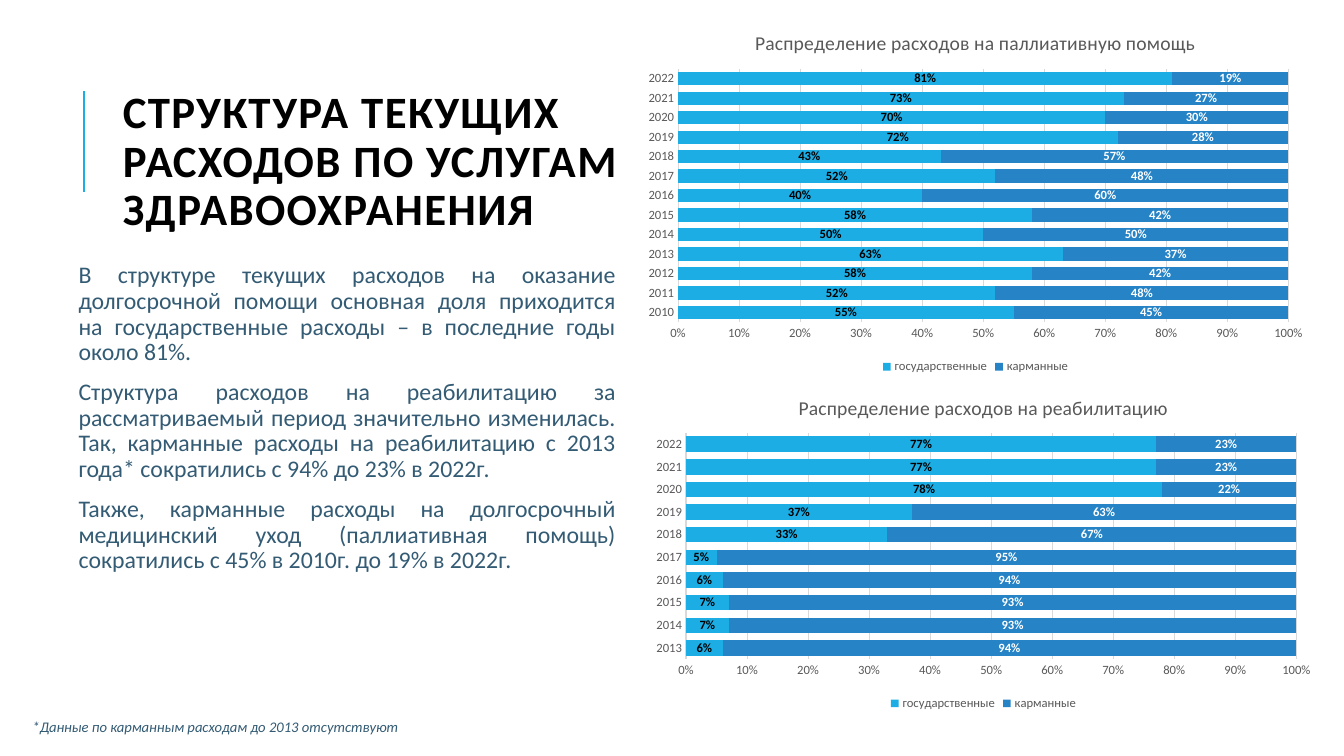
from dataclasses import dataclass

from lxml import etree
from pptx import Presentation
from pptx.chart.data import CategoryChartData
from pptx.dml.color import RGBColor
from pptx.enum.chart import XL_CHART_TYPE as ChartType
from pptx.enum.chart import XL_LABEL_POSITION as LabelPosition
from pptx.enum.chart import XL_LEGEND_POSITION as LegendPosition
from pptx.enum.chart import XL_TICK_MARK as TickMark
from pptx.enum.shapes import MSO_CONNECTOR as Connector
from pptx.enum.text import MSO_ANCHOR as Anchor
from pptx.enum.text import MSO_AUTO_SIZE as AutoSize
from pptx.enum.text import PP_ALIGN as Align
from pptx.oxml.ns import qn
from pptx.util import Cm, Pt


@dataclass(frozen=True)
class Theme:
    font: str = "Calibri"
    black: str = "000000"
    white: str = "FFFFFF"
    state: str = "1CADE4"
    pocket: str = "2683C6"
    body: str = "335B74"
    muted: str = "595959"
    grid: str = "D9D9D9"
    heading_size: float = 32
    body_size: float = 17
    note_size: float = 10.5
    chart_title_size: float = 14
    chart_size: float = 9


THEME = Theme()


def style_font(font, size, color, bold=False, italic=False):
    font.name = THEME.font
    font.size = Pt(size)
    font.color.rgb = RGBColor.from_string(color)
    font.bold = bold
    font.italic = italic


def add_justified_text(slide, box, paragraphs, size, italic=False):
    frame = slide.shapes.add_textbox(*map(Cm, box)).text_frame
    frame.word_wrap = True
    frame.margin_left = frame.margin_right = Cm(0.13)
    frame.margin_top = frame.margin_bottom = Cm(0.13)
    for index, text in enumerate(paragraphs):
        paragraph = frame.add_paragraph() if index else frame.paragraphs[0]
        paragraph.alignment = Align.JUSTIFY
        paragraph.line_spacing = 0.9
        paragraph.space_after = Pt(10)
        run = paragraph.add_run()
        run.text = text
        style_font(run.font, size, THEME.body, italic=italic)


deck = Presentation()
deck.slide_width, deck.slide_height = Cm(33.87), Cm(19.05)
slide = deck.slides.add_slide(deck.slide_layouts[5])

# Heading with its accent line
accent = slide.shapes.add_connector(Connector.STRAIGHT, Cm(2.12), Cm(4.83), Cm(2.12), Cm(2.29))
accent.line.color.rgb = RGBColor.from_string(THEME.state)
accent.line.width = Pt(1.5)
etree.SubElement(accent._element.spPr, qn("a:effectLst"))

heading = slide.shapes.title
heading.left, heading.top, heading.width, heading.height = map(Cm, (2.84, 1.63, 14.1, 4.93))
heading_frame = heading.text_frame
heading_frame.auto_size = AutoSize.NONE
heading_frame.word_wrap = True
heading_frame.vertical_anchor = Anchor.MIDDLE
heading_line = heading_frame.paragraphs[0]
heading_line.alignment = Align.LEFT
heading_line.line_spacing = 0.9
heading_run = heading_line.add_run()
heading_run.text = "СТРУКТУРА ТЕКУЩИХ РАСХОДОВ ПО УСЛУГАМ ЗДРАВООХРАНЕНИЯ"
style_font(heading_run.font, THEME.heading_size, THEME.black, bold=True)
heading_run._r.get_or_add_rPr().set("spc", "100")

# Findings and footnote
findings = [
    "В структуре текущих расходов на оказание долгосрочной помощи основная доля "
    "приходится на государственные расходы – в последние годы около 81%.",
    "Структура расходов на реабилитацию за рассматриваемый период значительно изменилась. "
    "Так, карманные расходы на реабилитацию с 2013 года* сократились с 94% до 23% в 2022г.",
    "Также, карманные расходы на долгосрочный медицинский уход (паллиативная помощь) "
    "сократились с 45% в 2010г. до 19% в 2022г.",
]
add_justified_text(slide, (1.85, 6.5, 13.8, 9.2), findings, THEME.body_size)
footnote = ["*Данные по карманным расходам до 2013 отсутствуют"]
add_justified_text(slide, (0.69, 18, 12.3, 0.76), footnote, THEME.note_size, italic=True)

# Charts: title, box, first year, state share in percent (the rest is out of pocket)
spending_charts = [
    ("Распределение расходов на паллиативную помощь", (16, 0.33, 17.17, 9.2), 2010,
     [55, 52, 58, 63, 50, 58, 40, 52, 43, 72, 70, 73, 81]),
    ("Распределение расходов на реабилитацию", (16.2, 9.53, 17.17, 8.48), 2013,
     [6, 7, 7, 6, 5, 33, 37, 78, 77, 77]),
]
series_colors = [(THEME.state, THEME.black), (THEME.pocket, THEME.white)]

for chart_title, box, first_year, state_shares in spending_charts:
    data = CategoryChartData(number_format="0%")
    data.categories = [str(first_year + offset) for offset in range(len(state_shares))]
    data.add_series("государственные", [share / 100 for share in state_shares])
    data.add_series("карманные", [(100 - share) / 100 for share in state_shares])
    chart = slide.shapes.add_chart(ChartType.BAR_STACKED_100, *map(Cm, box), data).chart
    style_font(chart.font, THEME.chart_size, THEME.muted)

    chart.has_title = True
    title_run = chart.chart_title.text_frame.paragraphs[0].add_run()
    title_run.text = chart_title
    style_font(title_run.font, THEME.chart_title_size, THEME.muted)
    chart.chart_title.include_in_layout = False

    chart.has_legend = True
    chart.legend.position = LegendPosition.BOTTOM
    chart.legend.include_in_layout = False
    style_font(chart.legend.font, THEME.chart_size, THEME.muted)

    years, shares = chart.category_axis, chart.value_axis
    for axis in (years, shares):
        axis.major_tick_mark = axis.minor_tick_mark = TickMark.NONE
        style_font(axis.tick_labels.font, THEME.chart_size, THEME.muted)
    shares.has_major_gridlines = True
    shares.tick_labels.number_format = "0%"
    shares.tick_labels.number_format_is_linked = False
    shares.format.line.fill.background()
    for line in (years.format.line, shares.major_gridlines.format.line):
        line.color.rgb = RGBColor.from_string(THEME.grid)
        line.width = Pt(0.75)

    plot = chart.plots[0]
    plot.gap_width, plot.overlap = 47, 100
    plot.vary_by_categories = False
    for series, (bar_color, label_color) in zip(plot.series, series_colors):
        series.format.fill.solid()
        series.format.fill.fore_color.rgb = RGBColor.from_string(bar_color)
        labels = series.data_labels
        labels.show_value = True
        labels.position = LabelPosition.CENTER
        labels.number_format = "0%"
        labels.number_format_is_linked = False
        style_font(labels.font, THEME.chart_size, label_color, bold=True)

deck.save("out.pptx")
